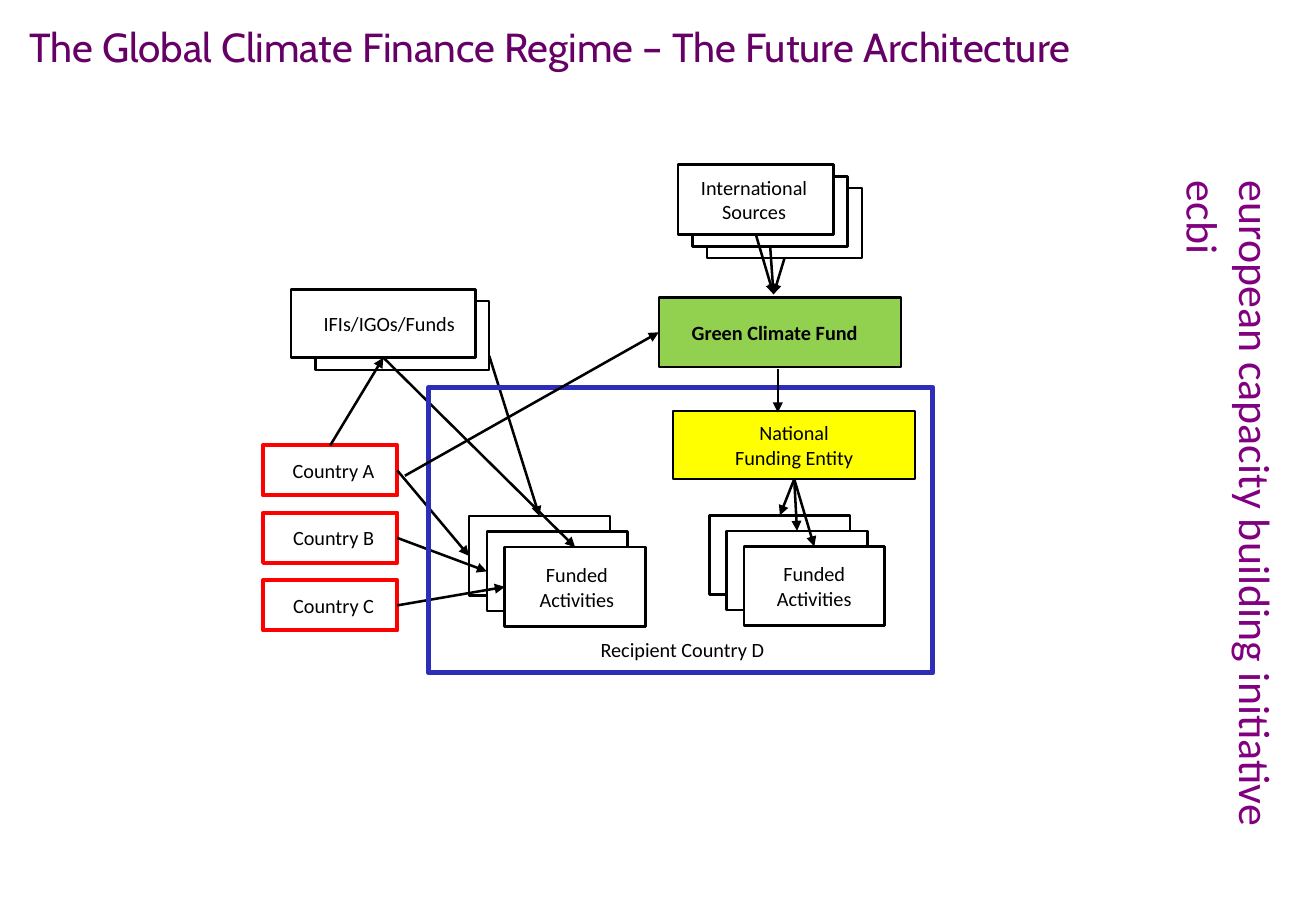
from lxml import etree
from pptx import Presentation
from pptx.dml.color import RGBColor
from pptx.enum import shapes, text
from pptx.oxml.ns import qn
from pptx.util import Pt

BOTTOM, TOP, LEFT, RIGHT = 2, 0, 1, 3


def color(value):
    return RGBColor.from_string(value)


def set_font(para, name, size, value, bold=False):
    para.font.name = name
    para.font.size = Pt(size)
    para.font.bold = bold
    para.font.color.rgb = color(value)


def add_title(page, words):
    title = page.shapes.title
    title.left, title.top, title.width, title.height = Pt(10), Pt(9.4), Pt(698), Pt(36.7)
    frame = title.text_frame
    frame.text = words
    frame.auto_size = text.MSO_AUTO_SIZE.NONE
    frame.vertical_anchor = text.MSO_ANCHOR.TOP
    para = frame.paragraphs[0]
    para.alignment = text.PP_ALIGN.JUSTIFY
    set_font(para, "Cabin", 24, "660066")


def add_sidebar(page, words):
    box = page.shapes.add_textbox(Pt(710), Pt(100), Pt(54), Pt(431.3))
    frame = box.text_frame
    frame.word_wrap = True
    frame.text = words
    frame._txBody.bodyPr.set("vert", "eaVert")
    set_font(frame.paragraphs[0], "Calibri", 26, "800080")


def add_box(page, left, top, width, height, lines=(), fill="FFFFFF",
            line="000000", weight=1.5, bold=False, shift=0):
    box = page.shapes.add_shape(shapes.MSO_SHAPE.RECTANGLE,
                                Pt(left), Pt(top), Pt(width), Pt(height))
    box.shadow.inherit = False
    if fill:
        box.fill.solid()
        box.fill.fore_color.rgb = color(fill)
    else:
        box.fill.background()
    box.line.color.rgb = color(line)
    box.line.width = Pt(weight)
    frame = box.text_frame
    frame.word_wrap = True
    frame.margin_left = Pt(5 + max(2 * shift, 0))
    frame.margin_right = Pt(5 + max(-2 * shift, 0))
    frame.margin_top = frame.margin_bottom = 0
    frame.vertical_anchor = text.MSO_ANCHOR.MIDDLE
    for index, words in enumerate(lines):
        para = frame.paragraphs[0] if index == 0 else frame.add_paragraph()
        para.text = words
        para.alignment = text.PP_ALIGN.CENTER
        set_font(para, "Calibri", 12, "000000", bold)
    return box


def add_stack(page, left, top, width, height, step_x, step_y, lines, shift=0):
    return [add_box(page, left + i * step_x, top + i * step_y, width, height,
                    lines if i == 2 else (), shift=shift) for i in range(3)]


def add_arrow(page, start, end):
    points = [end_point if isinstance(end_point[0], (int, float)) else (0, 0)
              for end_point in (start, end)]
    arrow = page.shapes.add_connector(shapes.MSO_CONNECTOR.STRAIGHT,
                                      *(Pt(value) for point in points for value in point))
    if not isinstance(start[0], (int, float)):
        arrow.begin_connect(*start)
    if not isinstance(end[0], (int, float)):
        arrow.end_connect(*end)
    arrow.line.color.rgb = color("000000")
    arrow.line.width = Pt(1.5)
    etree.SubElement(arrow.line._get_or_add_ln(), qn("a:tailEnd"), type="triangle")
    etree.SubElement(arrow._element.spPr, qn("a:effectLst"))


def main():
    deck = Presentation()
    deck.slide_width, deck.slide_height = Pt(780), Pt(540)
    page = deck.slides.add_slide(deck.slide_layouts[5])
    add_title(page, "The Global Climate Finance Regime – The Future Architecture")
    add_sidebar(page, "european capacity building initiative ecbi")

    green_fund = add_box(page, 390.5, 176.5, 143.5, 41, ["Green Climate Fund"],
                         fill="92D050", bold=True, shift=-3)
    sources = add_stack(page, 419, 111.5, 92, 41.5, -8.5, -7,
                        ["International", "Sources"], shift=-1)
    national = add_box(page, 399, 243.5, 143.5, 40.5, ["National", "Funding Entity"],
                       fill="FFFF00")
    national_activities = add_stack(page, 420.5, 305.5, 83.5, 47, 10.2, 9.2,
                                    ["Funded Activities"])
    direct_activities = add_stack(page, 278, 306, 83.5, 47, 10.6, 9.2,
                                  ["Funded Activities"], shift=1)
    back_funds = add_box(page, 187, 178.5, 103, 41)
    funds = add_box(page, 172.5, 171.5, 109.5, 40.5, ["IFIs/IGOs/Funds"], shift=3.5)
    countries = [add_box(page, 156, 264 + 40 * i, 79.5, 29.7, [f"Country {letter}"],
                         line="FF0000", weight=2.5, shift=2)
                 for i, letter in enumerate("ABC")]

    for source in sources:
        add_arrow(page, (source, BOTTOM), (458.5, 174.5))
    for activity in national_activities:
        add_arrow(page, (national, BOTTOM), (activity, TOP))
    for country, activity in zip(countries, direct_activities):
        add_arrow(page, (country, RIGHT), (activity, LEFT))
    add_arrow(page, (countries[0], TOP), (funds, BOTTOM))
    add_arrow(page, (funds, BOTTOM), (direct_activities[2], TOP))
    add_arrow(page, (290, 211), (direct_activities[0], TOP))

    recipient = add_box(page, 254, 229.7, 299, 169.2, ["Recipient Country D"],
                        fill=None, line="2D2DB9", weight=3, shift=1)
    recipient.text_frame.vertical_anchor = text.MSO_ANCHOR.BOTTOM
    recipient.text_frame.margin_bottom = Pt(7)
    add_arrow(page, (240, 282), (green_fund, LEFT))
    add_arrow(page, (461, 219), (461, 244.5))

    deck.save("out.pptx")


if __name__ == "__main__":
    main()
